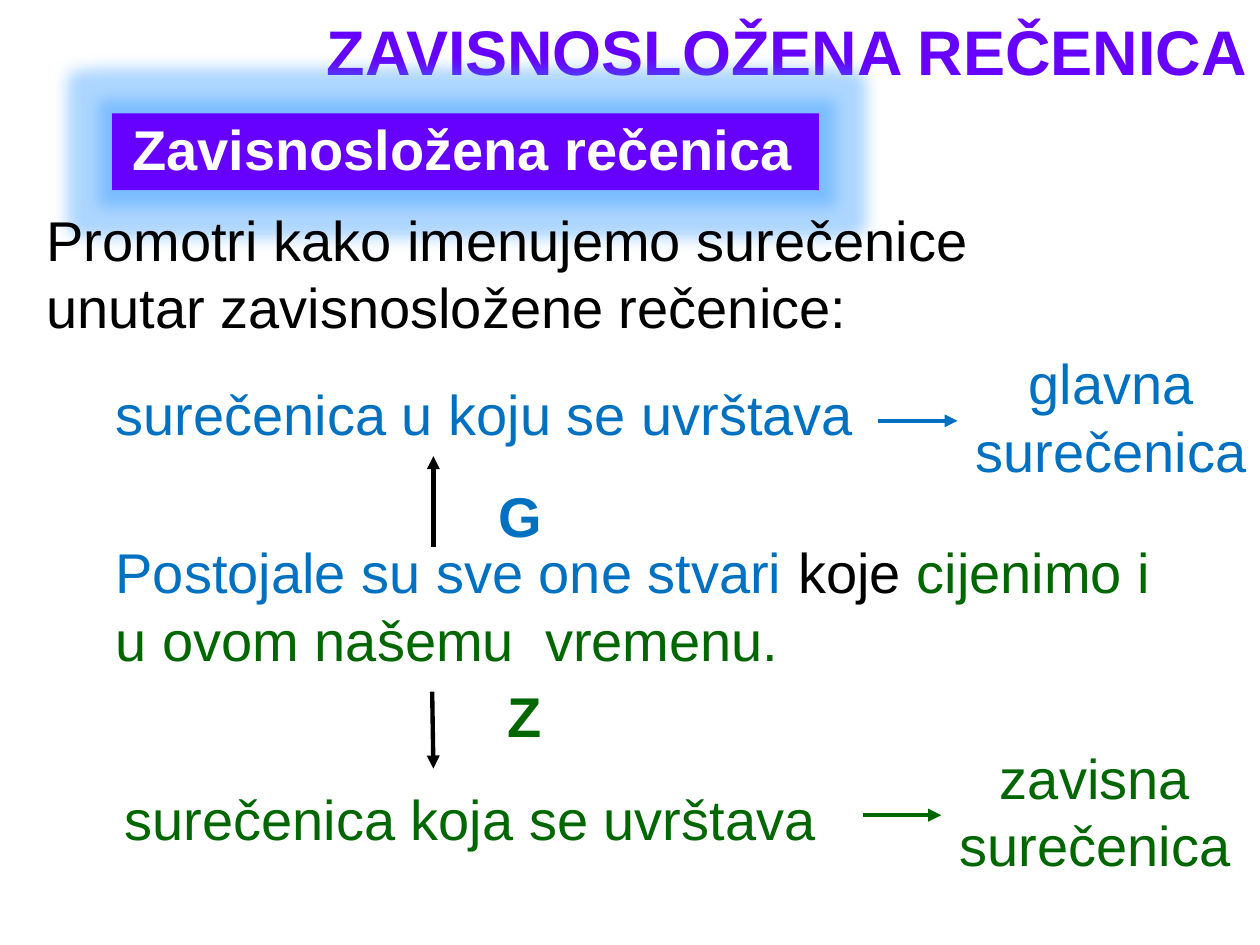
from dataclasses import dataclass

from lxml.etree import SubElement
from pptx import Presentation
from pptx.dml.color import RGBColor as RGB
from pptx.enum.shapes import MSO_CONNECTOR as Conn, MSO_SHAPE as Shape
from pptx.enum.text import MSO_ANCHOR as Anchor, MSO_AUTO_SIZE as Fit, PP_ALIGN as Align
from pptx.oxml.ns import qn
from pptx.util import Inches, Pt


@dataclass(frozen=True)
class Theme:
    font: str = "Arial"
    head: int = 36
    body: int = 32
    line: float = 2.5
    violet: str = "6600FF"
    blue: str = "0070C0"
    green: str = "006600"
    black: str = "000000"
    white: str = "FFFFFF"
    glow: str = "3399FF"


T = Theme()


def color(code):
    return RGB.from_string(code)


def place(shape, *box):
    shape.left, shape.top, shape.width, shape.height = map(Inches, box)


def style(para, hue=None, size=T.body, bold=False, align=Align.LEFT):
    font = para.font
    font.name, font.size, font.bold = T.font, Pt(size), bold
    if hue:
        font.color.rgb = color(hue)
    para.alignment = align


def add_title(slide, text):
    title = slide.shapes.title
    place(title, 2.23, 0, 7.77, 0.76)
    frame = title.text_frame
    frame.text = text
    frame.word_wrap, frame.auto_size = True, Fit.NONE
    frame.vertical_anchor = Anchor.BOTTOM
    para = frame.paragraphs[0]
    para.line_spacing = 0.9
    style(para, T.violet, T.head, True, Align.RIGHT)


def add_text(slide, box, text, hue, wrap=True, bold=False, align=Align.LEFT):
    frame = slide.shapes.add_textbox(*map(Inches, box)).text_frame
    frame.word_wrap = wrap
    para = frame.paragraphs[0]
    para.text = text
    style(para, hue, bold=bold, align=align)
    return frame


def add_mixed(slide, box, parts):
    frame = add_text(slide, box, "", None)
    for text, hue in parts:
        run = frame.paragraphs[0].add_run()
        run.text = text
        run.font.color.rgb = color(hue)


def add_banner(slide, text):
    bar = slide.shapes.add_shape(Shape.RECTANGLE, *map(Inches, (0.89, 0.9, 5.61, 0.61)))
    bar.fill.solid()
    bar.fill.fore_color.rgb = color(T.violet)
    bar.line.fill.background()
    bar.shadow.inherit = False
    # Soft glow around the bar
    effects = bar.element.spPr.find(qn("a:effectLst"))
    glow = SubElement(effects, qn("a:glow"), rad=str(Pt(18)))
    tone = SubElement(glow, qn("a:srgbClr"), val=T.glow)
    SubElement(tone, qn("a:alpha"), val="40000")

    frame = add_text(slide, (0.98, 0.64, 5.94, 0.84), text, T.white, bold=True)
    frame.vertical_anchor = Anchor.BOTTOM
    frame.margin_left = frame.margin_right = Inches(0.07)
    frame.margin_top = frame.margin_bottom = Inches(0.04)
    frame.paragraphs[0].space_before = Pt(10)


def add_arrow(slide, start, end, hue):
    arrow = slide.shapes.add_connector(Conn.STRAIGHT, *map(Inches, start + end))
    arrow.line.color.rgb = color(hue)
    arrow.line.width = Pt(T.line)
    SubElement(arrow.line._get_or_add_ln(), qn("a:tailEnd"), type="triangle")
    SubElement(arrow.element.spPr, qn("a:effectLst"))


def main():
    deck = Presentation()
    deck.slide_width, deck.slide_height = Inches(10), Inches(7.5)
    slide = deck.slides.add_slide(deck.slide_layouts[5])

    # Heading and task
    add_title(slide, "ZAVISNOSLOŽENA REČENICA")
    add_banner(slide, "Zavisnosložena rečenica")
    add_text(slide, (0.27, 1.58, 7.97, 1.18),
             "Promotri kako imenujemo surečenice unutar zavisnosložene rečenice:", T.black)

    # Example sentence
    add_mixed(slide, (0.82, 4.22, 8.57, 1.18), [
        ("Postojale su sve one stvari ", T.blue),
        ("koje ", T.black),
        ("cijenimo i u ovom našemu  vremenu.", T.green),
    ])

    # Clause descriptions
    add_text(slide, (0.82, 2.96, 6.87, 0.64), "surečenica u koju se uvrštava", T.blue)
    lower = add_text(slide, (0.89, 6.1, 6.44, 0.67), "surečenica koja se uvrštava", T.green)
    lower.paragraphs[0].line_spacing = 1.15

    # Clause names and letters
    for left, top, name, hue in [(7.46, 2.72, "glavna surečenica", T.blue),
                                 (7.33, 5.85, "zavisna surečenica", T.green)]:
        add_text(slide, (left, top, 2.72, 1.18), name, hue, align=Align.CENTER)
    for left, top, width, mark, hue in [(3.86, 3.77, 0.55, "G", T.blue),
                                        (3.93, 5.36, 0.48, "Z", T.green)]:
        add_text(slide, (left, top, width, 0.64), mark, hue, wrap=False, bold=True)

    # Arrows
    for start, end, hue in [((3.44, 4.34), (3.44, 3.62), T.black),
                            ((3.43, 5.49), (3.44, 6.1), T.black),
                            ((6.97, 3.34), (7.6, 3.34), T.blue),
                            ((6.85, 6.47), (7.47, 6.47), T.green)]:
        add_arrow(slide, start, end, hue)

    deck.save("out.pptx")


if __name__ == "__main__":
    main()
